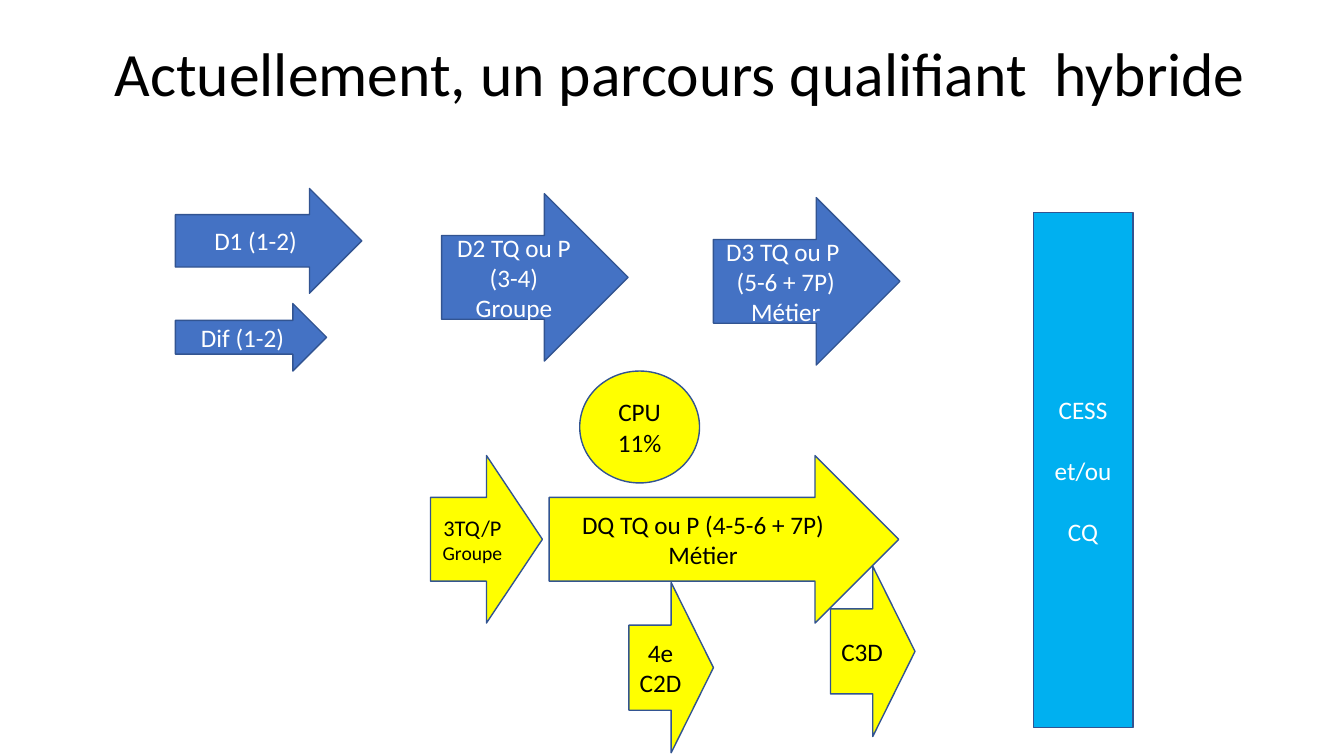
import pptx
import pptx.util
import pptx.dml.color
import pptx.enum.shapes
import pptx.enum.text

Cm = pptx.util.Cm
Pt = pptx.util.Pt
SHAPE = pptx.enum.shapes.MSO_SHAPE
ALIGN = pptx.enum.text.PP_ALIGN
MIDDLE = pptx.enum.text.MSO_ANCHOR.MIDDLE

BLUE, YELLOW, SKY = "4472C4", "FFFF00", "00B0F0"
OUTLINE, BLACK, WHITE = "325491", "000000", "FFFFFF"


def color(hex_code):
    return pptx.dml.color.RGBColor.from_string(hex_code)


def write_lines(frame, lines, ink, align, gap=0):
    frame.word_wrap = True
    frame.vertical_anchor = MIDDLE
    for index, (words, size) in enumerate(lines):
        paragraph = frame.paragraphs[0] if index == 0 else frame.add_paragraph()
        paragraph.alignment = align
        if index:
            paragraph.space_before = Pt(gap)
        run = paragraph.add_run()
        run.text = words
        run.font.name = "Calibri"
        run.font.size = Pt(size)
        run.font.color.rgb = color(ink)


deck = pptx.Presentation()
deck.slide_width = Cm(33.87)
deck.slide_height = Cm(19.05)
slide = deck.slides.add_slide(deck.slide_layouts[6])

title = slide.shapes.add_textbox(Cm(2.64), Cm(0.1), Cm(29.21), Cm(3.68)).text_frame
write_lines(title, [("Actuellement, un parcours qualifiant  hybride", 44)], BLACK, ALIGN.LEFT)
title.paragraphs[0].line_spacing = 0.9

ARROW = SHAPE.RIGHT_ARROW
steps = [
    (ARROW, 4.42, 4.75, 4.7, 2.64, BLUE, [("D1 (1-2)", 18)]),
    (ARROW, 11.13, 4.88, 4.7, 4.22, BLUE, [("D2 TQ ou P (3-4)", 18), ("Groupe", 18)]),
    (ARROW, 4.42, 7.65, 3.81, 1.7, BLUE, [("Dif (1-2)", 18)]),
    (ARROW, 17.98, 4.98, 4.7, 4.22, BLUE,
     [("D3 TQ ou P ", 18), ("(5-6 + 7P)", 18), ("Métier", 18)]),
    (ARROW, 10.85, 11.48, 2.82, 4.22, YELLOW, [("3TQ/P", 16), ("Groupe", 14)]),
    (ARROW, 13.84, 11.48, 8.81, 4.22, YELLOW,
     [("DQ TQ ou P (4-5-6 + 7P)", 18), ("Métier", 18)]),
    (SHAPE.FLOWCHART_CONNECTOR, 14.61, 9.35, 3.02, 2.82, YELLOW, [("CPU", 18), ("11%", 18)]),
    (ARROW, 15.85, 14.68, 2.13, 4.29, YELLOW, [("4e C2D", 18)]),
    (ARROW, 20.93, 14.27, 2.13, 4.29, YELLOW, [("C3D", 18)]),
    (SHAPE.RECTANGLE, 26.04, 5.36, 2.51, 12.98, SKY,
     [("CESS", 18), ("et/ou", 18), ("CQ", 18)]),
]

for outline, left, top, width, height, fill, lines in steps:
    step = slide.shapes.add_shape(outline, Cm(left), Cm(top), Cm(width), Cm(height))
    step.shadow.inherit = False
    step.fill.solid()
    step.fill.fore_color.rgb = color(fill)
    step.line.color.rgb = color(OUTLINE)
    step.line.width = Pt(1)
    ink = BLACK if fill == YELLOW else WHITE
    gap = 22 if fill == SKY else 0
    write_lines(step.text_frame, lines, ink, ALIGN.CENTER, gap)

deck.save("out.pptx")
